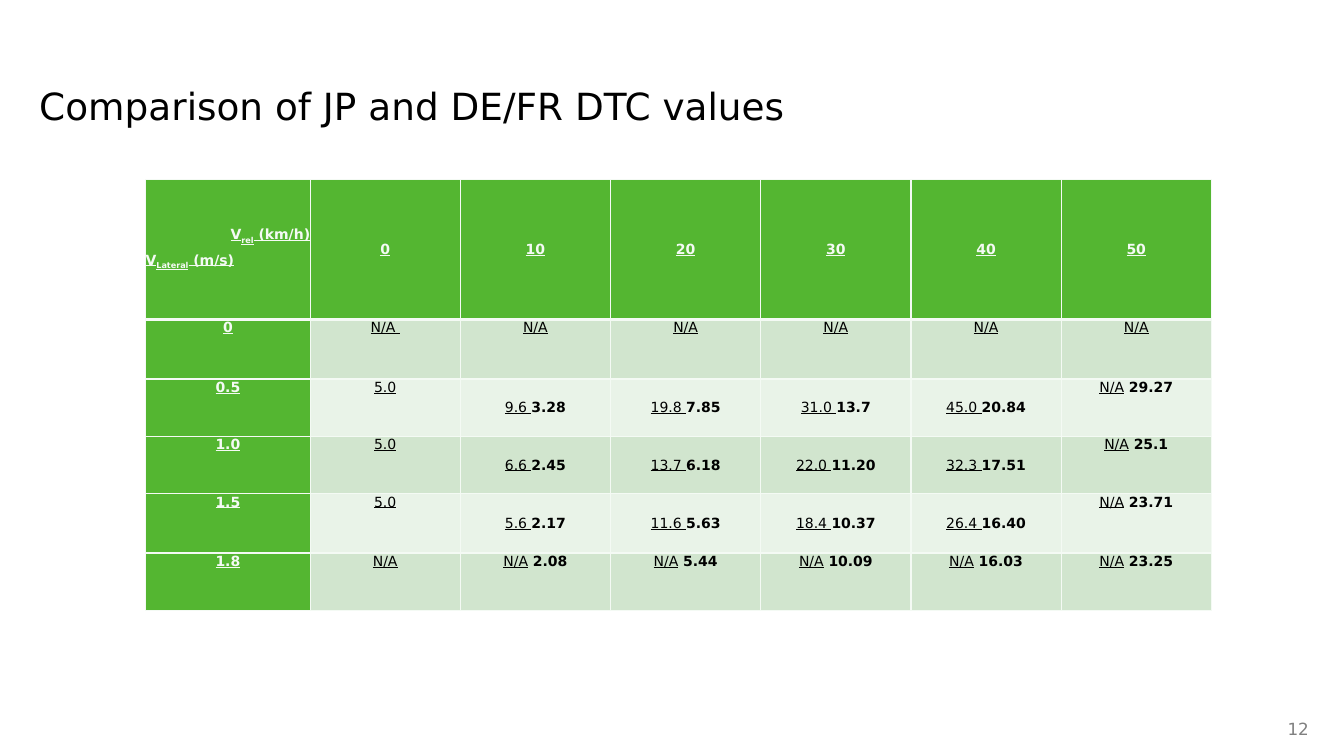
from pptx import Presentation
from pptx import util as u
from pptx.dml.color import RGBColor
from pptx.enum import text
from pptx.oxml import parse_xml
from pptx.oxml.ns import nsdecls

FONT = "DejaVu Sans"
GREEN, PALE, PALER = "54B631", "D1E5CE", "E9F3E8"
OFF_WHITE, BLACK, GRAY = "F4FAF4", "000000", "808080"
Pt = u.Pt


def rgb(color):
    return RGBColor.from_string(color)


def style(paragraph, size, color, align, spacing):
    paragraph.font.name = FONT
    paragraph.font.size = Pt(size)
    paragraph.font.color.rgb = rgb(color)
    paragraph.alignment = align
    paragraph.line_spacing = spacing


deck = Presentation()
deck.slide_width, deck.slide_height = Pt(960), Pt(540)
slide = deck.slides.add_slide(deck.slide_layouts[5])

# Title
title = slide.shapes.title
title.left, title.top, title.width, title.height = Pt(28), Pt(49), Pt(750), Pt(66)
heading = title.text_frame
heading.margin_left = 0
heading.vertical_anchor = text.MSO_ANCHOR.TOP
heading.text = "Comparison of JP and DE/FR DTC values"
style(heading.paragraphs[0], 26.7, BLACK, text.PP_ALIGN.LEFT, 1.2)

# Page number
page_number = slide.shapes.add_textbox(Pt(729.5), Pt(510.5), Pt(212.5), Pt(20)).text_frame
page_number.word_wrap = True
page_number.vertical_anchor = text.MSO_ANCHOR.MIDDLE
page_number.text = "12"
style(page_number.paragraphs[0], 12, GRAY, text.PP_ALIGN.RIGHT, 1.0)

# Table values: JP underlined, then DE/FR in bold after the bar
speeds = ["0", "10", "20", "30", "40", "50"]
dtc_values = {
    "0": ["N/A ", "N/A", "N/A", "N/A", "N/A", "N/A"],
    "0.5": ["5.0", "9.6 |3.28", "19.8 |7.85", "31.0 |13.7", "45.0 |20.84", "N/A| 29.27"],
    "1.0": ["5.0", "6.6 |2.45", "13.7 |6.18", "22.0 |11.20", "32.3 |17.51", "N/A| 25.1"],
    "1.5": ["5.0", "5.6 |2.17", "11.6 |5.63", "18.4 |10.37", "26.4 |16.40", "N/A| 23.71"],
    "1.8": ["N/A", "N/A| 2.08", "N/A| 5.44", "N/A| 10.09", "N/A| 16.03", "N/A| 23.25"],
}
rows = [["", *speeds]] + [[lateral, *values] for lateral, values in dtc_values.items()]
row_heights = [100, 42.4, 41, 41, 42.4, 41]
column_widths = [117.5] + [107.3] * len(speeds)

comparison = slide.shapes.add_table(
    len(rows), len(column_widths), Pt(104), Pt(128.3),
    Pt(sum(column_widths)), Pt(sum(row_heights))).table
for column, width in zip(comparison.columns, column_widths):
    column.width = Pt(width)
for row, height in zip(comparison.rows, row_heights):
    row.height = Pt(height)

for r, values in enumerate(rows):
    for c, value in enumerate(values):
        cell = comparison.cell(r, c)
        is_label = r == 0 or c == 0
        cell.margin_left = cell.margin_right = cell.margin_top = cell.margin_bottom = 0
        is_middle = r == 0 or (" |" in value)
        cell.vertical_anchor = text.MSO_ANCHOR.MIDDLE if is_middle else text.MSO_ANCHOR.TOP

        # Borders, with a heavy rule under the header row
        borders = {"L": 1, "R": 1, "T": 3 if r == 1 else 1, "B": 3 if r == 0 else 1}
        for side, weight in borders.items():
            cell._tc.get_or_add_tcPr().append(parse_xml(
                f'<a:ln{side} {nsdecls("a")} w="{Pt(weight)}"><a:solidFill>'
                f'<a:srgbClr val="{OFF_WHITE}"/></a:solidFill></a:ln{side}>'))
        cell.fill.solid()
        cell.fill.fore_color.rgb = rgb(GREEN if is_label else PALE if r % 2 else PALER)

        # Paragraphs as alignment and runs of (text, bold, underline, baseline)
        if r == 0 and c == 0:
            lines = [(align, [("V", True, True, 0), (index, True, True, -25000),
                              (unit, True, True, 0)])
                     for align, index, unit in [
                         (text.PP_ALIGN.RIGHT, "rel", " (km/h)"),
                         (text.PP_ALIGN.JUSTIFY, "Lateral", " (m/s)")]]
        else:
            jp, _, de_fr = value.partition("|")
            parts = [(jp, is_label, True, 0)]
            if de_fr:
                parts.append((de_fr, True, False, 0))
            lines = [(text.PP_ALIGN.CENTER, parts)]

        for i, (align, parts) in enumerate(lines):
            frame = cell.text_frame
            paragraph = frame.add_paragraph() if i else frame.paragraphs[0]
            style(paragraph, 10, OFF_WHITE if is_label else BLACK, align, Pt(12))
            paragraph.space_after = Pt(0 if r else 6)
            for words, bold, underline, baseline in parts:
                run = paragraph.add_run()
                run.text = words
                run.font.bold, run.font.underline = bold, underline
                if baseline:
                    run._r.get_or_add_rPr().set("baseline", str(baseline))

deck.save("out.pptx")
